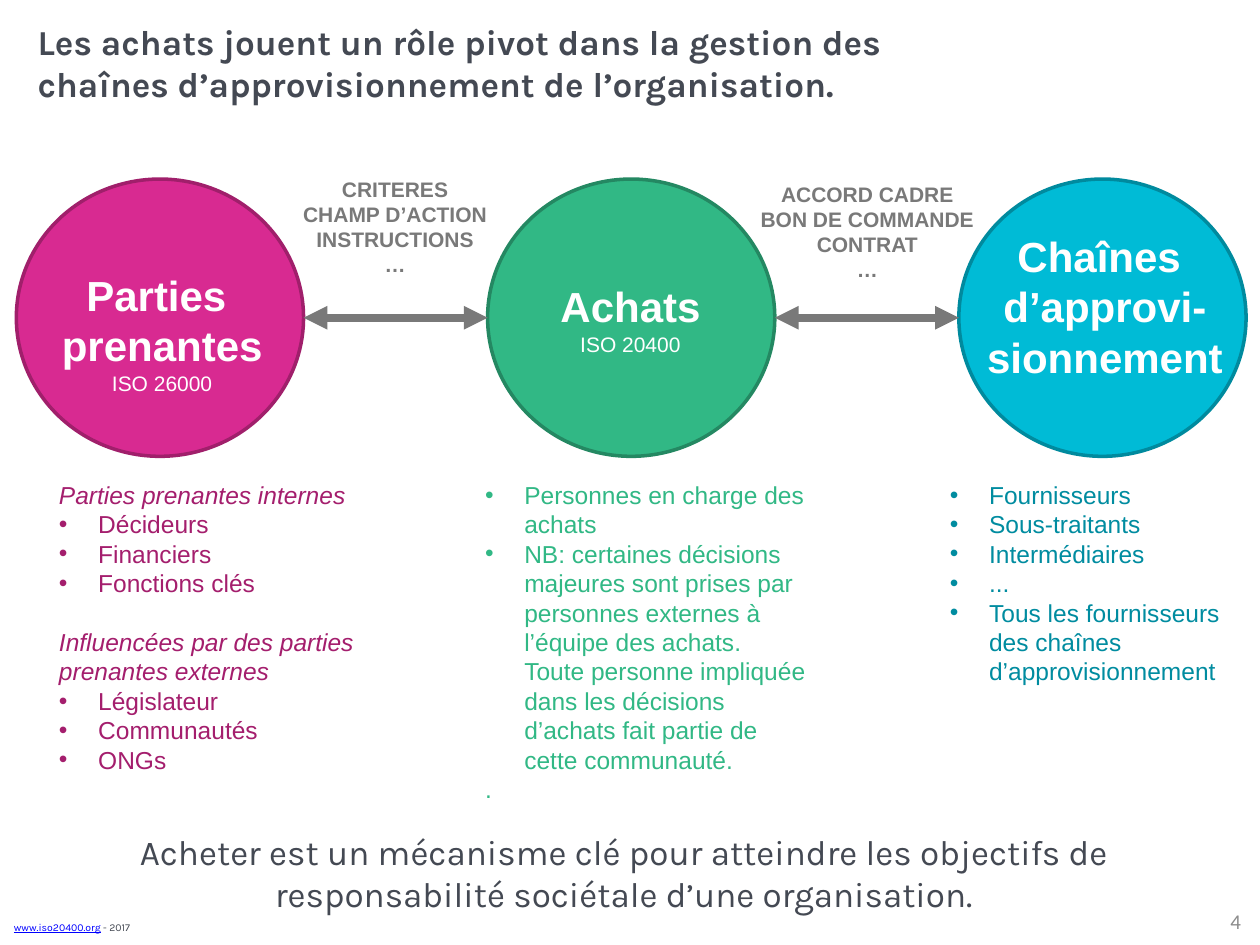
from dataclasses import dataclass

from lxml.etree import SubElement
from pptx import Presentation
from pptx.dml.color import RGBColor
from pptx.enum.shapes import MSO_CONNECTOR as Connector, MSO_SHAPE as Preset
from pptx.enum.text import MSO_ANCHOR as Anchor, MSO_AUTO_SIZE as AutoSize, PP_ALIGN as Align
from pptx.oxml.ns import qn
from pptx.slide import Slide
from pptx.util import Cm, Pt

COLORS = {
    "text": "444953", "link": "0000FF", "number": "8C8C8C", "grey": "797979", "white": "FFFFFF",
    "pink": "D82A91", "pink_edge": "A01F6B", "pink_text": "A41E6D",
    "green": "31B885", "green_edge": "248862",
    "cyan": "00BBD6", "cyan_edge": "008A9E", "cyan_text": "008CA0",
}
CIRCLE_LEFT, CIRCLE_TOP, CIRCLE_PITCH = 0.33, 3.61, 9.5
CIRCLE_WIDTH, CIRCLE_HEIGHT = 5.79, 5.59
ARROW_Y = CIRCLE_TOP + CIRCLE_HEIGHT / 2
LIST_TOP = 9.55
INDENT = 0.79
LIST_SIZE = 14
LIST_LINE = 16.8


@dataclass
class Line:
    text: str
    size: float = LIST_SIZE
    bold: bool = False
    italic: bool = False
    bullet: bool = False
    before: float = 0


@dataclass
class TextBlock:
    left: float
    top: float
    width: float
    height: float
    color: str
    lines: list[Line]
    align: Align = Align.LEFT
    font: str = "Arial"
    anchor: Anchor = Anchor.TOP
    wrap: bool = True
    grow: bool = True


@dataclass
class Stage:
    name: str
    title: TextBlock
    details: TextBlock


def rgb(name: str) -> RGBColor:
    return RGBColor.from_string(COLORS[name])


def bullets(*texts: str) -> list[Line]:
    return [Line(text, bullet=True) for text in texts]


def add_bullet(para) -> None:
    properties = para._p.get_or_add_pPr()
    properties.set("marL", str(Cm(INDENT)))
    properties.set("indent", str(-Cm(INDENT)))
    SubElement(properties, qn("a:buFont"), typeface="Arial")
    SubElement(properties, qn("a:buChar"), char="•")


def add_text(page: Slide, block: TextBlock):
    box = page.shapes.add_textbox(Cm(block.left), Cm(block.top), Cm(block.width), Cm(block.height))
    frame = box.text_frame
    frame.word_wrap = block.wrap
    frame.vertical_anchor = block.anchor
    frame.auto_size = AutoSize.SHAPE_TO_FIT_TEXT if block.grow else AutoSize.NONE
    for index, line in enumerate(block.lines):
        para = frame.add_paragraph() if index else frame.paragraphs[0]
        para.text = line.text
        para.alignment = block.align
        if line.before:
            para.space_before = Pt(line.before)
        if line.bullet:
            add_bullet(para)
        para.font.name = block.font
        para.font.size = Pt(line.size)
        para.font.bold = line.bold
        para.font.italic = line.italic
        para.font.color.rgb = rgb(block.color)
    return box


def add_circle(page: Slide, left: float, name: str) -> None:
    circle = page.shapes.add_shape(
        Preset.OVAL, Cm(left), Cm(CIRCLE_TOP), Cm(CIRCLE_WIDTH), Cm(CIRCLE_HEIGHT))
    circle.shadow.inherit = False
    circle.fill.solid()
    circle.fill.fore_color.rgb = rgb(name)
    circle.line.color.rgb = rgb(f"{name}_edge")
    circle.line.width = Pt(2)


def add_arrow(page: Slide, start: float, end: float) -> None:
    arrow = page.shapes.add_connector(
        Connector.STRAIGHT, Cm(start), Cm(ARROW_Y), Cm(end), Cm(ARROW_Y))
    arrow.line.color.rgb = rgb("grey")
    arrow.line.width = Pt(4.5)
    outline = arrow.line._get_or_add_ln()
    for tip in ("a:headEnd", "a:tailEnd"):
        SubElement(outline, qn(tip), type="triangle")
    SubElement(arrow._element.spPr, qn("a:effectLst"))


def add_footer(page: Slide) -> None:
    box = add_text(page, TextBlock(0.03, 18.44, 16.43, 0.51, "text", [Line("", 6)], font="Karla"))
    para = box.text_frame.paragraphs[0]
    link = para.add_run()
    link.text = "www.iso20400.org"
    link.font.color.rgb = rgb("link")
    link.font.underline = True
    para.add_run().text = " - 2017"


STAGES = [
    Stage(
        "pink",
        TextBlock(0.97, 5.31, 4.6, 2.82, "white", [
            Line("Parties ", 24, bold=True), Line("prenantes", 24, bold=True), Line("ISO 26000", 12),
        ], Align.CENTER, wrap=False),
        TextBlock(0.94, LIST_TOP, 7.19, 6.25, "pink_text", [
            Line("Parties prenantes internes", italic=True),
            *bullets("Décideurs", "Financiers", "Fonctions clés"),
            Line("Influencées par des parties prenantes externes", italic=True, before=LIST_LINE),
            *bullets("Législateur", "Communautés", "ONGs"),
        ]),
    ),
    Stage(
        "green",
        TextBlock(11.02, 5.54, 3.38, 1.8, "white", [
            Line("Achats", 24, bold=True), Line("ISO 20400", 12),
        ], Align.CENTER, wrap=False),
        TextBlock(9.53, LIST_TOP, 7.19, 6.83, "green", [
            *bullets(
                "Personnes en charge des achats",
                "NB: certaines décisions majeures sont prises par personnes externes à l’équipe "
                "des achats.\vToute personne impliquée dans les décisions d’achats fait partie de "
                "cette communauté."),
            Line("."),
        ]),
    ),
    Stage(
        "cyan",
        TextBlock(17.78, 4.52, 8.99, 3.33, "white", [
            Line("Chaînes ", 24, bold=True), Line("d’approvi-sionnement", 24, bold=True),
        ], Align.CENTER),
        TextBlock(18.9, LIST_TOP, 6.25, 4.45, "cyan_text", bullets(
            "Fournisseurs", "Sous-traitants", "Intermédiaires", "...",
            "Tous les fournisseurs des chaînes d’approvisionnement")),
    ),
]
LINKS = [
    TextBlock(left, top, 7.19, 2.31, "grey", [Line(text, 12, bold=True) for text in texts], Align.CENTER)
    for left, top, texts in (
        (4.37, 3.43, ("CRITERES", "CHAMP D’ACTION", "INSTRUCTIONS", "…")),
        (13.89, 3.53, ("ACCORD CADRE", "BON DE COMMANDE", "CONTRAT", "…")),
    )
]
HEADLINE = TextBlock(0.51, 0.33, 19.51, 1.85, "text", [
    Line("Les achats jouent un rôle pivot dans la gestion des chaînes d’approvisionnement "
         "de l’organisation.", 20, bold=True),
], font="Karla", anchor=Anchor.MIDDLE, grow=False)
CONCLUSION = TextBlock(0.89, 16.61, 23.39, 1.96, "text", [
    Line("Acheter est un mécanisme clé pour atteindre les objectifs de responsabilité sociétale "
         "d’une organisation.", 20),
], Align.CENTER, font="Karla")
PAGE_NUMBER = TextBlock(19.35, 18.08, 5.92, 0.97, "number", [Line("4", 12)], Align.RIGHT,
                        font="Calibri", anchor=Anchor.MIDDLE, grow=False)


def main() -> None:
    deck = Presentation()
    deck.slide_width, deck.slide_height = Cm(25.4), Cm(19.05)
    page = deck.slides.add_slide(deck.slide_layouts[6])
    add_footer(page)
    for block in (HEADLINE, PAGE_NUMBER):
        add_text(page, block)
    for index, stage in enumerate(STAGES):
        left = CIRCLE_LEFT + index * CIRCLE_PITCH
        add_circle(page, left, stage.name)
        add_text(page, stage.title)
        add_text(page, stage.details)
    for index, label in enumerate(LINKS):
        left = CIRCLE_LEFT + index * CIRCLE_PITCH
        add_arrow(page, left + CIRCLE_WIDTH, left + CIRCLE_PITCH)
        add_text(page, label)
    add_text(page, CONCLUSION)
    deck.save("out.pptx")


if __name__ == "__main__":
    main()
